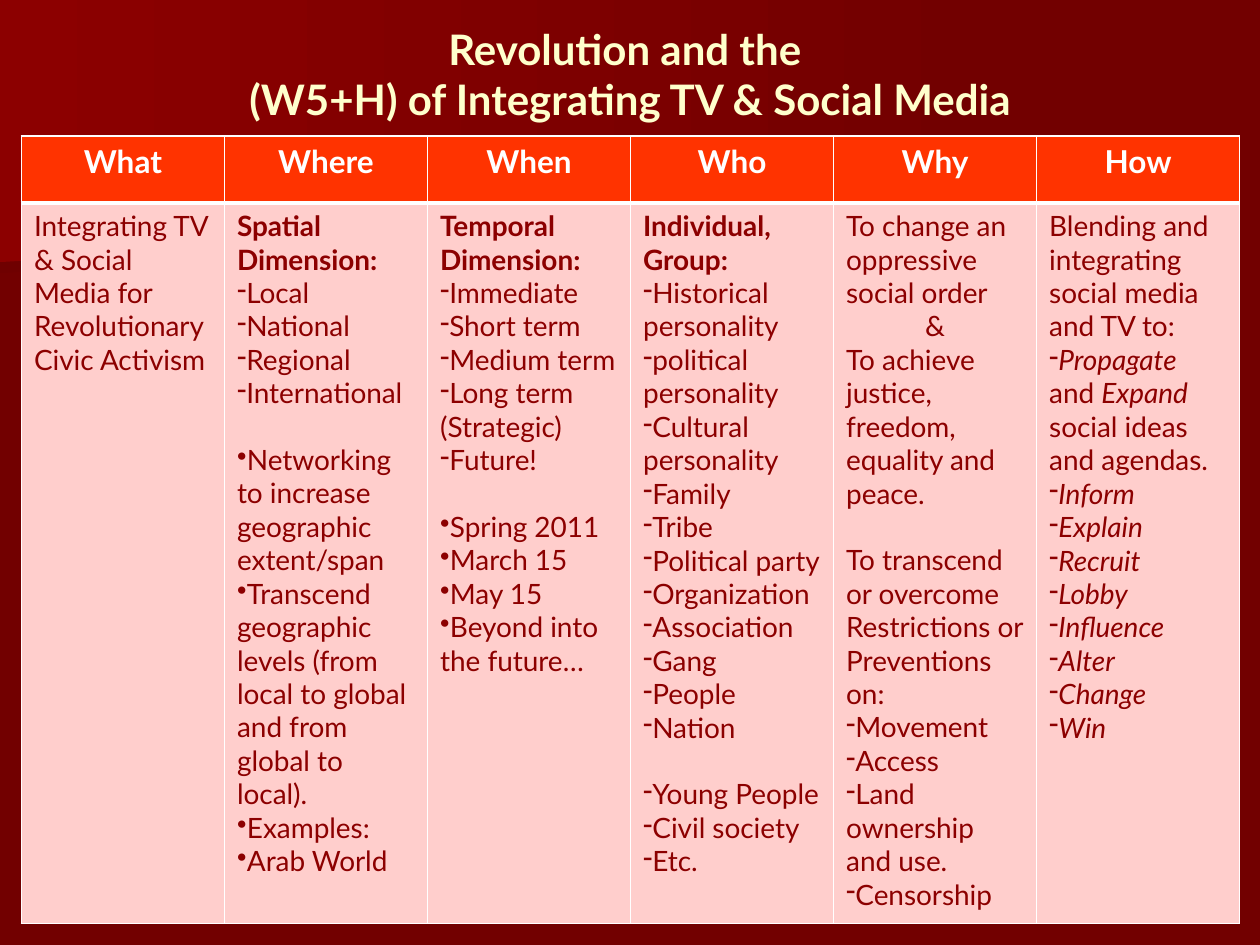
"""Build the slide on revolution and integrating TV and social media."""
from lxml.etree import SubElement
from pptx import Presentation
from pptx.dml.color import RGBColor
from pptx.enum.text import MSO_ANCHOR, PP_ALIGN
from pptx.oxml.ns import qn
from pptx.util import Inches, Pt

MAROON = RGBColor(0x72, 0x00, 0x00)
DEEP_MAROON = RGBColor(0x6F, 0x00, 0x00)
RED = RGBColor(0x8C, 0x00, 0x00)
ORANGE = RGBColor(0xFF, 0x33, 0x00)
PINK = RGBColor(0xFF, 0xCE, 0xCC)
CREAM = RGBColor(0xFF, 0xFF, 0xCC)
WHITE = RGBColor(0xFF, 0xFF, 0xFF)

RAYS = [
    ([(7.78, 1.53), (0, 2.17), (0, 1.01), (7.79, 1.01), (7.78, 1.28)], DEEP_MAROON),
    ([(7.92, 1.62), (0, 2.08), (0, 0), (7.92, 0)], RED),
]

# Leading "-" or "•" is a bullet, "#" bold, "&" centred, "_" toggles italic, "" a gap.
COLUMNS = {
    "What": ["Integrating TV & Social Media for Revolutionary Civic Activism"],
    "Where": [
        "#Spatial Dimension:", "-Local", "-National", "-Regional", "-International", "",
        "•Networking to increase geographic extent/span",
        "•Transcend geographic levels (from local to global and from global to local).",
        "•Examples:", "•Arab World",
    ],
    "When": [
        "#Temporal Dimension:", "-Immediate", "-Short term", "-Medium term",
        "-Long term (Strategic)", "-Future!", "",
        "•Spring 2011", "•March 15", "•May 15", "•Beyond into the future…",
    ],
    "Who": [
        "#Individual, Group:", "-Historical personality", "-political personality",
        "-Cultural personality", "-Family", "-Tribe", "-Political party",
        "-Organization", "-Association", "-Gang", "-People", "-Nation", "",
        "-Young People", "-Civil society", "-Etc.",
    ],
    "Why": [
        "To change an oppressive social order", "&",
        "To achieve justice, freedom, equality and peace.", "",
        "To transcend or overcome", "Restrictions or Preventions on:",
        "-Movement", "-Access", "-Land ownership and use.", "-Censorship",
    ],
    "How": [
        "Blending and integrating social media and TV to:",
        "-_Propagate_ and _Expand_ social ideas and agendas.",
        "-_Inform", "-_Explain", "-_Recruit", "-_Lobby",
        "-_Influence", "-_Alter", "-_Change", "-_Win",
    ],
}


def set_font(para, size, color, bold):
    para.font.name = "Lato"
    para.font.size = Pt(size)
    para.font.color.rgb = color
    para.font.bold = bold


def style_cell(cell, color, top, bottom):
    properties = cell._tc.get_or_add_tcPr()
    for side, width in (("L", 1), ("R", 1), ("T", top), ("B", bottom)):
        line = SubElement(properties, qn(f"a:ln{side}"), w=str(Pt(width)))
        fill = SubElement(line, qn("a:solidFill"))
        SubElement(fill, qn("a:srgbClr"), val=str(WHITE))
    cell.fill.solid()
    cell.fill.fore_color.rgb = color


deck = Presentation()
deck.slide_width, deck.slide_height = Inches(10), Inches(7.5)
page = deck.slides.add_slide(deck.slide_layouts[6])
page.background.fill.solid()
page.background.fill.fore_color.rgb = MAROON

for points, color in RAYS:
    corners = [(Inches(x), Inches(y)) for x, y in points]
    builder = page.shapes.build_freeform(*corners[0])
    builder.add_line_segments(corners[1:], close=True)
    ray = builder.convert_to_shape()
    ray.shadow.inherit = False
    ray.line.fill.background()
    ray.fill.gradient()
    ray.fill.gradient_angle = 0
    for stop, position, shade in zip(ray.fill.gradient_stops, (0, 1), (color, MAROON)):
        stop.position = position
        stop.color.rgb = shade

title = page.shapes.add_textbox(Inches(0.5), Inches(0.17), Inches(9), Inches(0.83))
title.text_frame.word_wrap = True
title.text_frame.vertical_anchor = MSO_ANCHOR.MIDDLE
para = title.text_frame.paragraphs[0]
para.text = "Revolution and the \v(W5+H) of Integrating TV & Social Media"
para.alignment = PP_ALIGN.CENTER
set_font(para, 24, CREAM, True)

table = page.shapes.add_table(
    2, len(COLUMNS), Inches(0.17), Inches(1.08), Inches(9.67), Inches(6.25)
).table
table.rows[0].height, table.rows[1].height = Inches(0.53), Inches(5.72)

for index, (heading, entries) in enumerate(COLUMNS.items()):
    header, body = table.cell(0, index), table.cell(1, index)
    style_cell(header, ORANGE, 1, 3)
    style_cell(body, PINK, 3, 1)
    para = header.text_frame.paragraphs[0]
    para.text = heading
    para.alignment = PP_ALIGN.CENTER
    set_font(para, 18, WHITE, True)

    for number, entry in enumerate(entries):
        if not entry:
            continue
        frame = body.text_frame
        para = frame.add_paragraph() if number else frame.paragraphs[0]
        set_font(para, 16, RED, entry.startswith("#"))
        para.alignment = PP_ALIGN.CENTER if entry == "&" else PP_ALIGN.LEFT
        if number and not entries[number - 1]:
            para.space_before = Pt(19)
        if entry[0] in "-•":
            SubElement(para._p.get_or_add_pPr(), qn("a:buChar"), char=entry[0])
            properties = para._p.get_or_add_pPr()
            properties.insert_element_before(properties.find(qn("a:buChar")), "a:defRPr")
        for part, text in enumerate(entry.lstrip("-•#").split("_")):
            if text:
                span = para.add_run()
                span.text = text
                span.font.italic = part % 2 == 1

deck.save("out.pptx")
